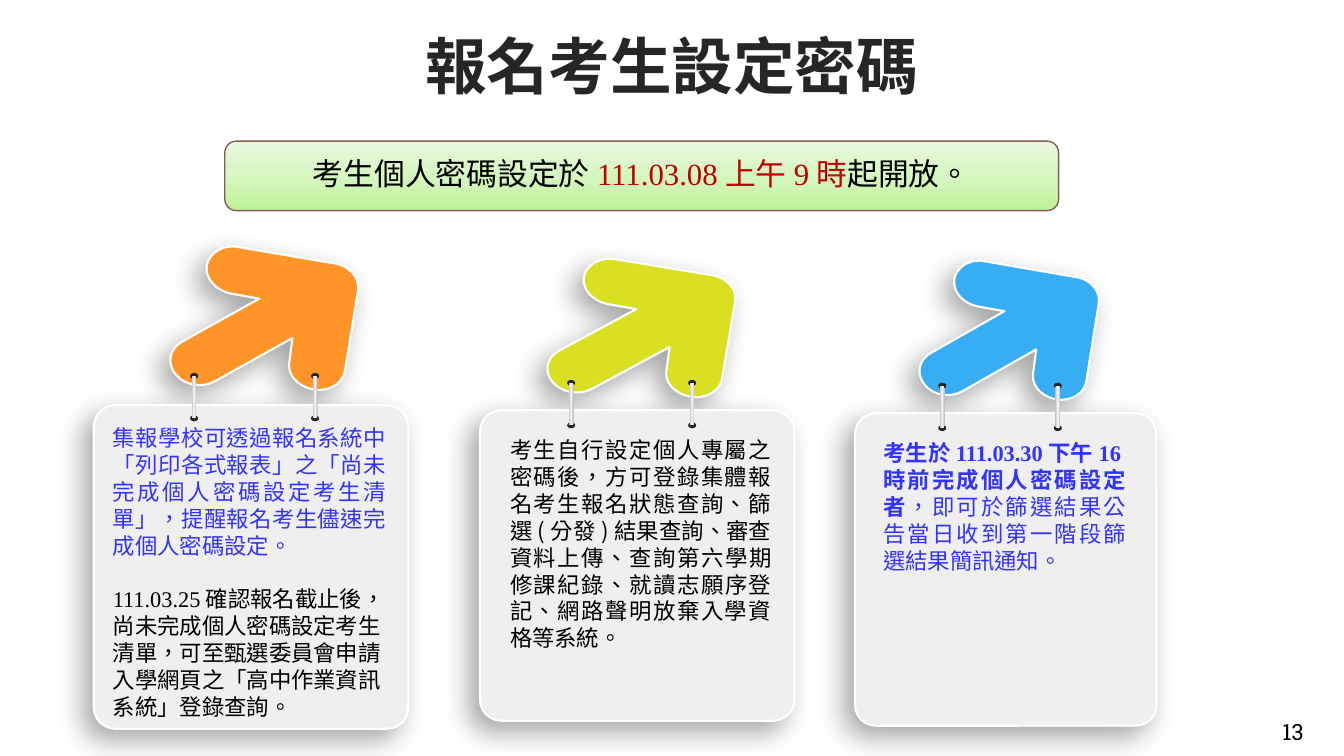
import math

from lxml import etree
from pptx import Presentation
from pptx import util as u
from pptx.dml.color import RGBColor
from pptx.enum import lang, shapes, text
from pptx.oxml.ns import qn

CJK, SERIF, SLAB = "Noto Sans CJK SC", "Times New Roman", "Roboto Slab"
BLACK, BLUE, RED = "000000", "3333FF", "C00000"
LEFT, CENTER, JUSTIFY = (text.PP_ALIGN.LEFT, text.PP_ALIGN.CENTER,
                         text.PP_ALIGN.JUSTIFY)
LINE_PITCH = u.Pt(19.2)

# Paragraphs are (paragraph format, [(words, font, colour, bold), ...])
TITLE = [({"alignment": CENTER}, [("報名考生設定密碼", CJK, "262626", True)])]
BANNER = [({"alignment": CENTER, "line_spacing": 0.9}, [
    ("考生個人密碼設定於", SERIF, BLACK, False),
    ("111.03.08上午9時", SERIF, RED, False),
    ("起開放。", SERIF, BLACK, False)])]
PAGE_NUMBER = [({"alignment": LEFT}, [("13", SLAB, BLACK, False)])]
CARD_FORMAT = {"alignment": JUSTIFY, "line_spacing": LINE_PITCH}

CARDS = [
    {"arrow": "37AEF4", "start": (9.57, 2.62), "scale": (0.955, 0.97),
     "card": (8.48, 4.1, 2.99, 3.1), "box": (8.66, 4.36, 2.61, 2.45),
     "words": [(CARD_FORMAT, [
         ("考生於111.03.30下午16時前完成個人密碼設定者", SERIF, BLUE, True),
         ("，即可於篩選結果公告當日收到第一階段篩選結果簡訊通知。",
          SERIF, BLUE, False)])]},
    {"arrow": "D9E021", "start": (5.9, 2.6), "scale": (1, 0.965),
     "card": (4.76, 4.07, 3.12, 3.08), "box": (4.96, 4.33, 2.79, 2.43),
     "words": [(CARD_FORMAT, [
         ("考生自行設定個人專屬之密碼後，方可登錄集體報名考生報名狀態查詢、"
          "篩選(分發)結果查詢、審查資料上傳、", CJK, BLACK, False),
         ("查詢第六學期修課紀錄", SERIF, BLACK, False),
         ("、就讀志願序登記、網路聲明放棄入學資格等系統。",
          CJK, BLACK, False)])]},
    {"arrow": "FF9528", "start": (2.16, 2.48), "scale": (1, 1),
     "card": (0.93, 4.02, 3.12, 3.21), "box": (1.02, 4.21, 2.91, 2.83),
     "words": [
         (CARD_FORMAT, [
             ("集報學校可透過報名系統中「列印各式報表」之「尚未完成個人密碼"
              "設定考生清單」，提醒報名考生儘速完成個人密碼設定。",
              SERIF, BLUE, False)]),
         ({"alignment": LEFT, "line_spacing": LINE_PITCH,
           "space_before": u.Pt(19.2)}, [
             ("111.03.25確認報名截止後，尚未完成個人密碼設定考生清單，"
              "可至甄選委員會申請入學網頁之「高中作業資訊系統」登錄查詢。",
              SERIF, BLACK, False)])]},
]

# Arrow outline from its start point: 2 numbers draw a line, 6 a Bézier curve
ARROW = [
    (0.06, -0.03, 0.13, -0.05, 0.21, -0.03), (1.15, 0.13),
    (1.31, 0.15, 1.41, 0.28, 1.39, 0.4), (1.26, 1.2),
    (1.24, 1.32, 1.1, 1.41, 0.94, 1.38), (0.79, 1.35, 0.68, 1.23, 0.71, 1.1),
    (0.74, 0.87), (-0.03, 1.3),
    (-0.16, 1.37, -0.33, 1.34, -0.42, 1.23),
    (-0.51, 1.12, -0.48, 0.98, -0.36, 0.91), (0.41, 0.48), (0.13, 0.43),
    (-0.02, 0.4, -0.13, 0.28, -0.11, 0.15), (-0.1, 0.09, -0.06, 0.04, 0, 0)]
ARROW_MIDDLE, ARROW_TURN = (0.465, 0.73), 9.5
ROD_X, ROD_Y = (0.965, -0.235), 1.46
ROD_LENGTH, ROD_WIDTH, DOT = 0.42, 0.05, (0.06, 0.08)


def color(value):
    return RGBColor.from_string(value)


def inches(values):
    return [u.Inches(value) for value in values]


def add_xml(parent, tag, **attributes):
    return etree.SubElement(
        parent, qn(tag), {name: str(value) for name, value in attributes.items()})


def set_gradient(shape, stops, angle):
    """Spread the stop colours evenly, at a clockwise angle in degrees."""
    shape.fill.gradient()
    gradient = shape.fill._xPr.find(qn("a:gradFill"))
    for child in list(gradient):
        gradient.remove(child)
    stop_list = add_xml(gradient, "a:gsLst")
    for index, value in enumerate(stops):
        stop = add_xml(stop_list, "a:gs", pos=index * 100000 // (len(stops) - 1))
        add_xml(stop, "a:srgbClr", val=value)
    add_xml(gradient, "a:lin", ang=angle * 60000, scaled=0)


def style(shape, fill=None, line=None, width=1):
    shape.shadow.inherit = False
    if fill:
        shape.fill.solid()
        shape.fill.fore_color.rgb = color(fill)
    if line:
        shape.line.color.rgb = color(line)
        shape.line.width = u.Pt(width)
    else:
        shape.line.fill.background()


def style_raised(shape, fill):
    """White outline with a soft shadow to the lower left."""
    style(shape, fill, "FFFFFF", 1.5)
    effects = shape._element.spPr.find(qn("a:effectLst"))
    shadow = add_xml(effects, "a:outerShdw", blurRad=u.Pt(20), dist=u.Pt(10),
                     dir=136 * 60000, algn="ctr", rotWithShape=0)
    add_xml(add_xml(shadow, "a:srgbClr", val="000000"), "a:alpha", val=34000)


def write(shape, paragraphs, size, anchor=text.MSO_ANCHOR.TOP, insets=(0.1, 0)):
    frame = shape.text_frame
    side, end = inches(insets)
    for name, value in {
            "word_wrap": True, "auto_size": text.MSO_AUTO_SIZE.NONE,
            "vertical_anchor": anchor, "margin_left": side, "margin_right": side,
            "margin_top": end, "margin_bottom": end}.items():
        setattr(frame, name, value)
    for index, (layout, spans) in enumerate(paragraphs):
        para = frame.add_paragraph() if index else frame.paragraphs[0]
        for name, value in layout.items():
            setattr(para, name, value)
        for words, font, shade, bold in spans:
            span = para.add_run()
            span.text = words
            for name, value in {
                    "size": u.Pt(size), "name": font, "bold": bold,
                    "language_id": lang.MSO_LANGUAGE_ID.TRADITIONAL_CHINESE}.items():
                setattr(span.font, name, value)
            span.font.color.rgb = color(shade)
            add_xml(span.font._element, "a:ea", typeface=CJK)


def add_arrow(page, start, scale):
    """Draw the outline upright, bend its curves, then turn it into place."""
    turn = math.radians(ARROW_TURN)
    cos, sin = math.cos(turn), math.sin(turn)
    middle = [s + m * k for s, m, k in zip(start, ARROW_MIDDLE, scale)]

    def upright(x, y):
        dx, dy = (s + v * k - m for s, v, k, m in zip(start, (x, y), scale, middle))
        return inches((middle[0] + dx * cos + dy * sin,
                       middle[1] - dx * sin + dy * cos))

    points = [upright(*step[i:i + 2]) for step in ARROW
              for i in range(0, len(step), 2)]
    builder = page.shapes.build_freeform(*upright(0, 0))
    builder.add_line_segments(points)
    arrow = builder.convert_to_shape()
    segments = iter(list(arrow._element.iter(qn("a:lnTo"))))
    for step in ARROW:
        first = next(segments)
        if len(step) == 6:
            first.tag = qn("a:cubicBezTo")
            for other in (next(segments), next(segments)):
                first.append(other[0])
                other.getparent().remove(other)
    arrow.rotation = ARROW_TURN
    return arrow


def add_centred(page, kind, middle, size):
    corner = [m - s / 2 for m, s in zip(middle, size)]
    return page.shapes.add_shape(kind, *inches(corner), *inches(size))


def add_rod(page, x, y):
    for end in (y + ROD_LENGTH / 2, y - ROD_LENGTH / 2):
        dot = add_centred(page, shapes.MSO_SHAPE.OVAL, (x, end), DOT)
        dot.rotation = 270
        style(dot, "262626")
    rod = add_centred(page, shapes.MSO_SHAPE.ROUNDED_RECTANGLE, (x, y),
                      (ROD_LENGTH, ROD_WIDTH))
    rod.adjustments[0] = 0.5
    rod.rotation = 270
    style(rod)
    set_gradient(rod, ("BFBFBF", "F2F2F2", "BFBFBF"), 90)


def add_card(page, item):
    (left, top), (wide, high) = item["start"], item["scale"]
    style_raised(add_arrow(page, item["start"], item["scale"]), item["arrow"])
    card = page.shapes.add_shape(shapes.MSO_SHAPE.ROUNDED_RECTANGLE,
                                 *inches(item["card"]))
    card.adjustments[0] = 0.069
    style_raised(card, "EFEFEF")
    for x in ROD_X:
        add_rod(page, left + x * wide, top + ROD_Y * high)
    write(page.shapes.add_textbox(*inches(item["box"])), item["words"], 16)


def main():
    deck = Presentation()
    deck.slide_width, deck.slide_height = inches((13.33, 7.5))
    page = deck.slides.add_slide(deck.slide_layouts[5])
    title = page.shapes.title
    title.left, title.top, title.width, title.height = inches((2.12, 0.29, 9.09, 0.71))
    write(title, TITLE, 44, text.MSO_ANCHOR.MIDDLE)
    number = page.shapes.add_textbox(*inches((12.62, 7.08, 0.69, 0.37)))
    write(number, PAGE_NUMBER, 16, insets=(0.1, 0.05))
    banner = page.shapes.add_shape(shapes.MSO_SHAPE.ROUNDED_RECTANGLE,
                                   *inches((2.23, 1.4, 8.27, 0.69)))
    style(banner, line="855D5D")
    set_gradient(banner, ("BEF297", "D5F6C0", "EAFAE0"), 270)
    write(banner, BANNER, 22, text.MSO_ANCHOR.MIDDLE, (0.09, 0.09))
    for item in CARDS:
        add_card(page, item)
    deck.save("out.pptx")


if __name__ == "__main__":
    main()
